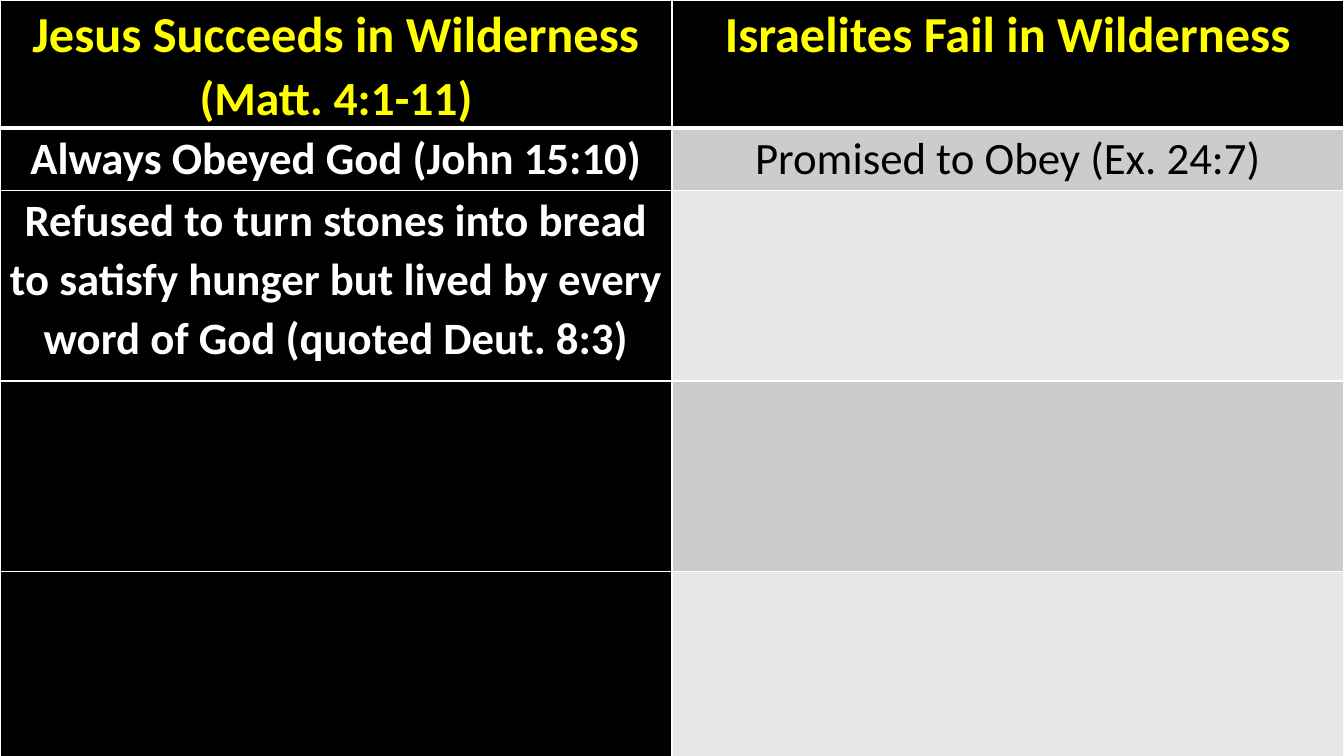
from dataclasses import dataclass

from lxml import etree
from pptx import Presentation
from pptx.dml.color import RGBColor
from pptx.enum import text
from pptx.oxml import ns
from pptx.util import Inches, Pt


@dataclass(frozen=True)
class Theme:
    font: str = "Calibri"
    black: str = "000000"
    white: str = "FFFFFF"
    heading: str = "FFFF00"
    bands: tuple = ("CCCCCC", "E7E7E7")
    heading_size: int = 36
    reference_size: int = 34
    body_size: int = 32
    line_spacing: float = 1.07
    rule: int = 1
    heavy_rule: int = 3


THEME = Theme()

HEADINGS = [
    [("Jesus Succeeds in Wilderness ", THEME.heading_size),
     ("(Matt. 4:1-11)", THEME.reference_size)],
    [("Israelites Fail in Wilderness", THEME.heading_size)],
]
COMPARISONS = [
    ("Always Obeyed God (John 15:10)", "Promised to Obey (Ex. 24:7)"),
    ("Refused to turn stones into bread to satisfy hunger but lived by every "
     "word of God (quoted Deut. 8:3)", ""),
    ("", ""),
    ("", ""),
]
ROW_HEIGHTS = [0.92, 0.62, 1.89, 1.89, 1.89]


def rule_cell(cell, top, bottom):
    properties = cell._tc.get_or_add_tcPr()
    sides = {"lnL": THEME.rule, "lnR": THEME.rule, "lnT": top, "lnB": bottom}
    for position, (side, weight) in enumerate(sides.items()):
        line = etree.Element(ns.qn(f"a:{side}"), w=str(Pt(weight)))
        fill = etree.SubElement(line, ns.qn("a:solidFill"))
        etree.SubElement(fill, ns.qn("a:srgbClr"), val=THEME.white)
        properties.insert(position, line)


def fill_cell(cell, background, runs, colour, bold):
    cell.fill.solid()
    cell.fill.fore_color.rgb = RGBColor.from_string(background)
    cell.margin_left = cell.margin_right = Inches(0.07)
    cell.margin_top = cell.margin_bottom = 0
    paragraph = cell.text_frame.paragraphs[0]
    paragraph.alignment = text.PP_ALIGN.CENTER
    paragraph.line_spacing = THEME.line_spacing
    for words, size in runs:
        run = paragraph.add_run()
        run.text = words
        run.font.name = THEME.font
        run.font.size = Pt(size)
        run.font.bold = bold
        run.font.color.rgb = RGBColor.from_string(colour)


def add_comparison(slide, left, top, width, height):
    frame = slide.shapes.add_table(
        len(ROW_HEIGHTS), len(HEADINGS), left, top, width, height)
    comparison = frame.table
    for row, row_height in zip(comparison.rows, ROW_HEIGHTS):
        row.height = Inches(row_height)
    frame.height = height

    for column, heading in enumerate(HEADINGS):
        cell = comparison.cell(0, column)
        fill_cell(cell, THEME.black, heading, THEME.heading, True)
        rule_cell(cell, THEME.rule, THEME.heavy_rule)

    for index, (jesus, israelites) in enumerate(COMPARISONS):
        band = THEME.bands[index % len(THEME.bands)]
        looks = [(jesus, THEME.black, THEME.white, True),
                 (israelites, band, THEME.black, False)]
        for column, (words, background, colour, bold) in enumerate(looks):
            cell = comparison.cell(index + 1, column)
            runs = [(words, THEME.body_size)] if words else []
            fill_cell(cell, background, runs, colour, bold)
            rule_cell(cell, THEME.rule if index else THEME.heavy_rule, THEME.rule)


def main():
    deck = Presentation()
    deck.slide_width = Inches(13.33)
    deck.slide_height = Inches(7.5)
    slide = deck.slides.add_slide(deck.slide_layouts[6])
    slide.background.fill.solid()
    slide.background.fill.fore_color.rgb = RGBColor.from_string(THEME.black)
    add_comparison(slide, 0, 0, deck.slide_width, Inches(7.52))
    deck.save("out.pptx")


if __name__ == "__main__":
    main()
